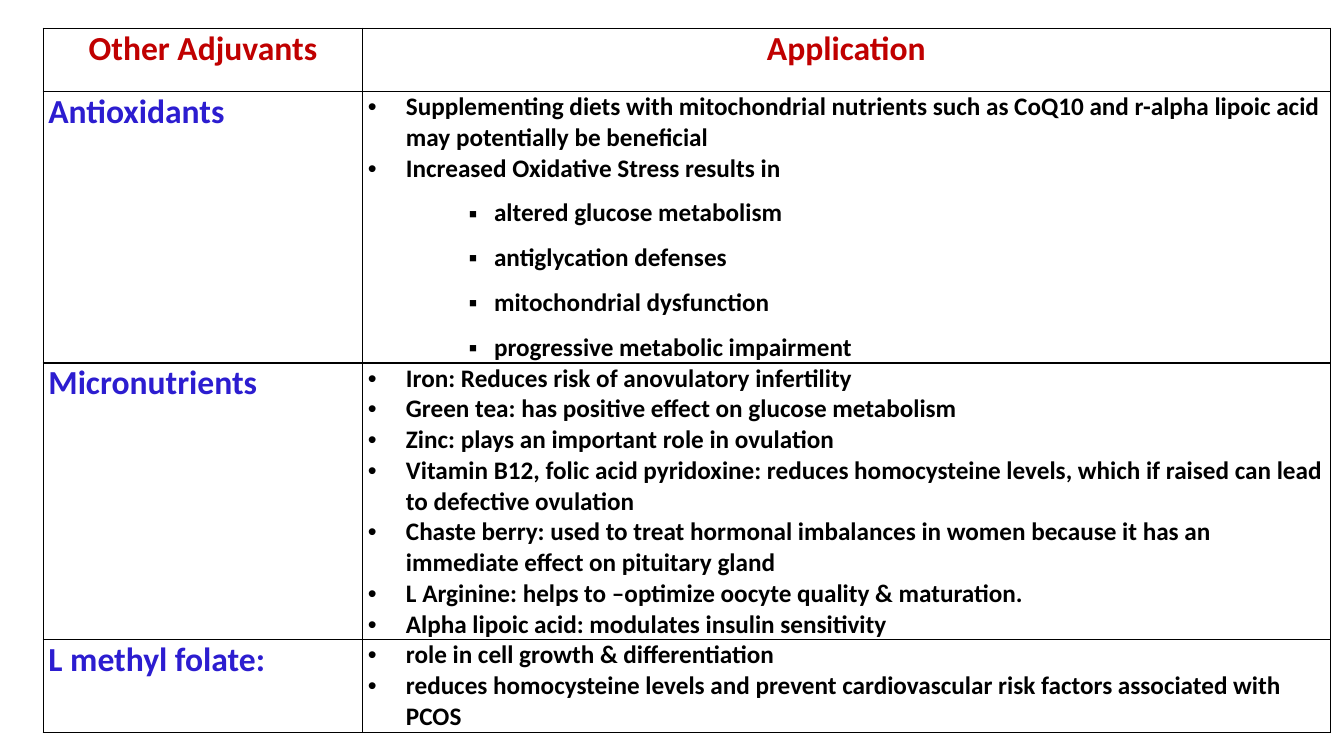
from lxml import etree
from pptx import Presentation
from pptx.dml.color import RGBColor
from pptx.enum import text
from pptx.oxml import ns
from pptx.util import Cm, Pt

HEADERS = ["Other Adjuvants", "Application"]
ADJUVANTS = [
    ("Antioxidants", [
        (0, "Supplementing diets with mitochondrial nutrients such as CoQ10 and r-alpha lipoic acid may potentially be beneficial"),
        (0, "Increased Oxidative Stress results in"),
        (2, "altered glucose metabolism"),
        (2, "antiglycation defenses"),
        (2, "mitochondrial dysfunction"),
        (2, "progressive metabolic impairment"),
    ]),
    ("Micronutrients", [
        (0, "Iron: Reduces risk of anovulatory infertility"),
        (0, "Green tea: has positive effect on glucose metabolism"),
        (0, "Zinc: plays an important role in ovulation"),
        (0, "Vitamin B12, folic acid pyridoxine: reduces homocysteine levels, which if raised can lead to defective ovulation"),
        (0, "Chaste berry: used to treat hormonal imbalances in women because it has an immediate effect on pituitary gland"),
        (0, "L Arginine: helps to –optimize oocyte quality & maturation."),
        (0, "Alpha lipoic acid: modulates insulin sensitivity"),
    ]),
    ("L methyl folate:", [
        (0, "role in cell growth & differentiation"),
        (0, "reduces homocysteine levels and prevent cardiovascular risk factors associated with PCOS"),
    ]),
]
RED, BLUE, BLACK = "C00000", "2C1DD0", "000000"
COL_WIDTHS = [8.05, 24.38]
ROW_HEIGHTS = [1.6, 6.8, 6.95, 2.3]
BULLETS = {0: ("•", 0.96, 0.96, 0), 2: ("▪", 3.18, 0.64, 10)}


def color(value):
    return RGBColor.from_string(value)


def write(p, words, size, shade):
    r = p.add_run()
    r.text = words
    r.font.name = "Calibri"
    r.font.size = Pt(size)
    r.font.bold = True
    r.font.color.rgb = color(shade)


def set_bullet(p, level):
    char, margin, hanging, before = BULLETS[level]
    p.level = level
    p.space_before = Pt(before)
    pPr = p._p.get_or_add_pPr()
    pPr.set("marL", str(Cm(margin)))
    pPr.set("indent", str(-Cm(hanging)))
    etree.SubElement(pPr, ns.qn("a:buFont"), typeface="Arial")
    etree.SubElement(pPr, ns.qn("a:buChar"), char=char)


def format_cell(cell):
    cell.margin_left = cell.margin_right = Cm(0.13)
    cell.margin_top = cell.margin_bottom = 0
    tcPr = cell._tc.get_or_add_tcPr()
    for side in ("lnL", "lnR", "lnT", "lnB"):
        line = etree.SubElement(tcPr, ns.qn("a:" + side), w=str(Pt(1)))
        fill = etree.SubElement(line, ns.qn("a:solidFill"))
        etree.SubElement(fill, ns.qn("a:srgbClr"), val=BLACK)
    cell.fill.background()


prs = Presentation()
prs.slide_width, prs.slide_height = Cm(33.87), Cm(19.05)
s = prs.slides.add_slide(prs.slide_layouts[6])
table = s.shapes.add_table(
    len(ROW_HEIGHTS), len(COL_WIDTHS), Cm(1.09), Cm(0.71),
    Cm(sum(COL_WIDTHS)), Cm(sum(ROW_HEIGHTS))).table
table.horz_banding = False
for col, width in zip(table.columns, COL_WIDTHS):
    col.width = Cm(width)
for row, height in zip(table.rows, ROW_HEIGHTS):
    row.height = Cm(height)
for cell in table.iter_cells():
    format_cell(cell)

for i, header in enumerate(HEADERS):
    p = table.cell(0, i).text_frame.paragraphs[0]
    p.alignment = text.PP_ALIGN.CENTER
    write(p, header, 24, RED)

for i, (name, applications) in enumerate(ADJUVANTS, 1):
    write(table.cell(i, 0).text_frame.paragraphs[0], name, 24, BLUE)
    tf = table.cell(i, 1).text_frame
    for j, (level, words) in enumerate(applications):
        p = tf.add_paragraph() if j else tf.paragraphs[0]
        set_bullet(p, level)
        write(p, words, 18, BLACK)

prs.save("out.pptx")
